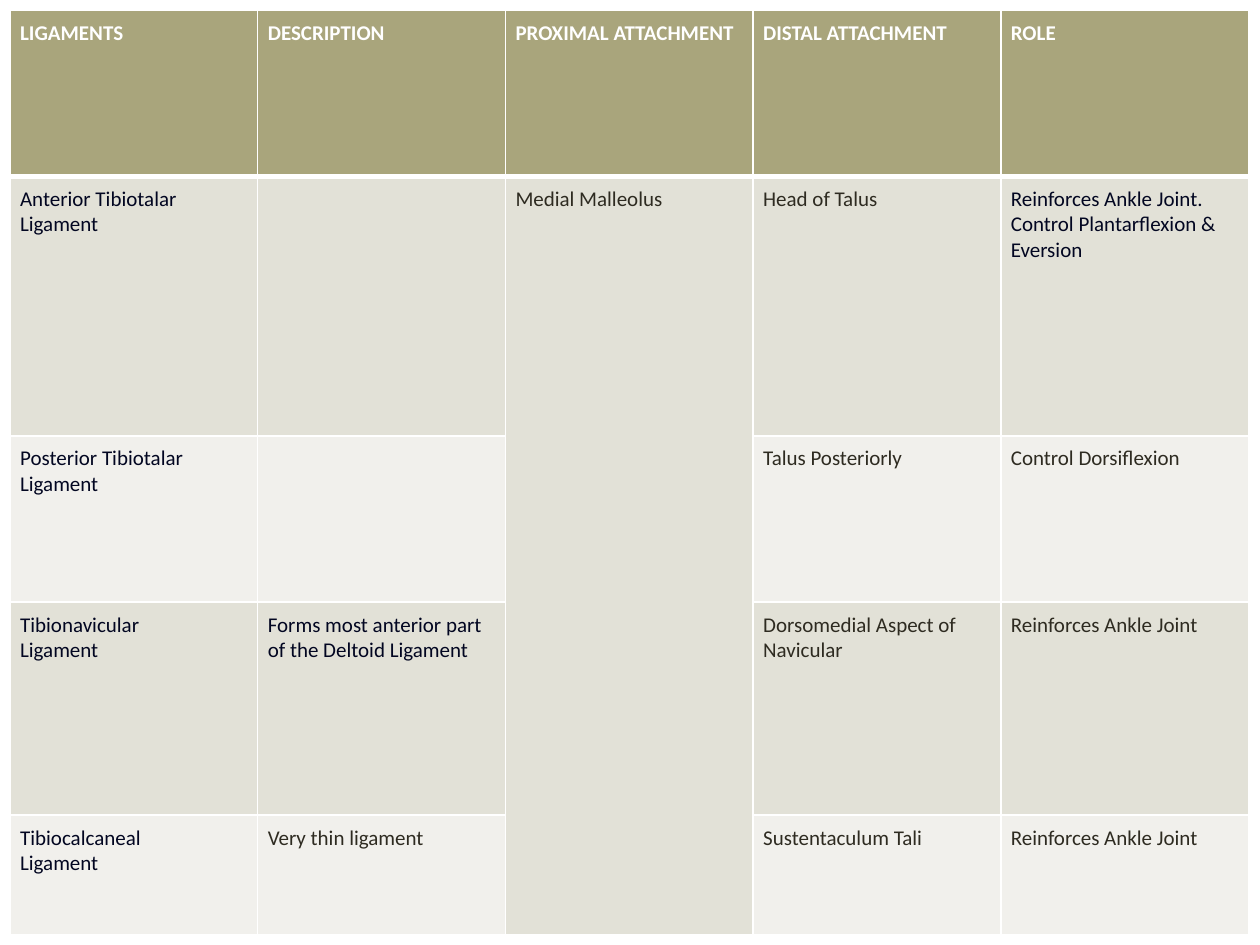
from lxml import etree
from pptx import Presentation
from pptx.dml.color import RGBColor
from pptx.oxml.ns import qn
from pptx.util import Inches, Pt

WHITE, OLIVE = "FFFFFF", "A9A57C"
BANDS = ("E2E1D7", "F1F0EC")
NAVY, BROWN = "020621", "2E2B21"
MARGIN = Inches(0.08)
ROW_HEIGHTS = (1.32, 2.06, 1.32, 1.69, 0.95)
PROXIMAL_COLUMN = 2

HEADINGS = ("LIGAMENTS", "DESCRIPTION", "PROXIMAL ATTACHMENT",
            "DISTAL ATTACHMENT", "ROLE")
# Each line break starts a new paragraph.
LIGAMENTS = (
    ("Anterior Tibiotalar\nLigament", "", "Medial Malleolus", "Head of Talus",
     "Reinforces Ankle Joint.\nControl Plantarflexion & Eversion"),
    ("Posterior Tibiotalar\nLigament", "", "", "Talus Posteriorly",
     "Control Dorsiflexion"),
    ("Tibionavicular\nLigament",
     "Forms most anterior part of the Deltoid Ligament", "",
     "Dorsomedial Aspect of Navicular", "Reinforces Ankle Joint"),
    ("Tibiocalcaneal\nLigament", "Very thin ligament", "",
     "Sustentaculum Tali", "Reinforces Ankle Joint"),
)
# (row, column) of the navy cells outside the first column
NAVY_CELLS = {(1, 4), (3, 1)}


def rgb(value):
    return RGBColor.from_string(value)


def set_borders(cell, top=1, bottom=1):
    """Add white borders; call before the fill, which must follow them."""
    properties = cell._tc.get_or_add_tcPr()
    for tag, points in (("lnL", 1), ("lnR", 1), ("lnT", top), ("lnB", bottom)):
        line = etree.SubElement(properties, qn(f"a:{tag}"), w=str(Pt(points)))
        fill = etree.SubElement(line, qn("a:solidFill"))
        etree.SubElement(fill, qn("a:srgbClr"), val=WHITE)


def write_cell(cell, text, fill, ink, bold=False):
    cell.margin_left = cell.margin_right = MARGIN
    cell.margin_top = cell.margin_bottom = MARGIN
    cell.fill.solid()
    cell.fill.fore_color.rgb = rgb(fill)
    if not text:
        return
    frame = cell.text_frame
    for index, line in enumerate(text.split("\n")):
        para = frame.add_paragraph() if index else frame.paragraphs[0]
        span = para.add_run()
        span.text = line
        span.font.name = "Calibri"
        span.font.size = Pt(12)
        span.font.bold = bold
        span.font.color.rgb = rgb(ink)


def add_ligament_table(page, left, top, width, height):
    rows = (HEADINGS, *LIGAMENTS)
    table = page.shapes.add_table(len(rows), len(HEADINGS),
                                  left, top, width, height).table
    for row, inches in zip(table.rows, ROW_HEIGHTS):
        row.height = Inches(inches)
    for r, texts in enumerate(rows):
        for c, text in enumerate(texts):
            cell = table.cell(r, c)
            set_borders(cell, top=3 if r == 1 else 1, bottom=3 if r == 0 else 1)
            if r == 0:
                write_cell(cell, text, OLIVE, WHITE, bold=True)
            else:
                band = BANDS[0 if c == PROXIMAL_COLUMN else (r - 1) % 2]
                ink = NAVY if c == 0 or (r, c) in NAVY_CELLS else BROWN
                write_cell(cell, text, band, ink)
    table.cell(1, PROXIMAL_COLUMN).merge(
        table.cell(len(rows) - 1, PROXIMAL_COLUMN))


def main():
    deck = Presentation()
    deck.slide_width, deck.slide_height = Inches(10), Inches(7.5)
    page = deck.slides.add_slide(deck.slide_layouts[6])
    add_ligament_table(page, Inches(0.08), Inches(0.08),
                       Inches(9.83), Inches(sum(ROW_HEIGHTS)))
    deck.save("out.pptx")


if __name__ == "__main__":
    main()
